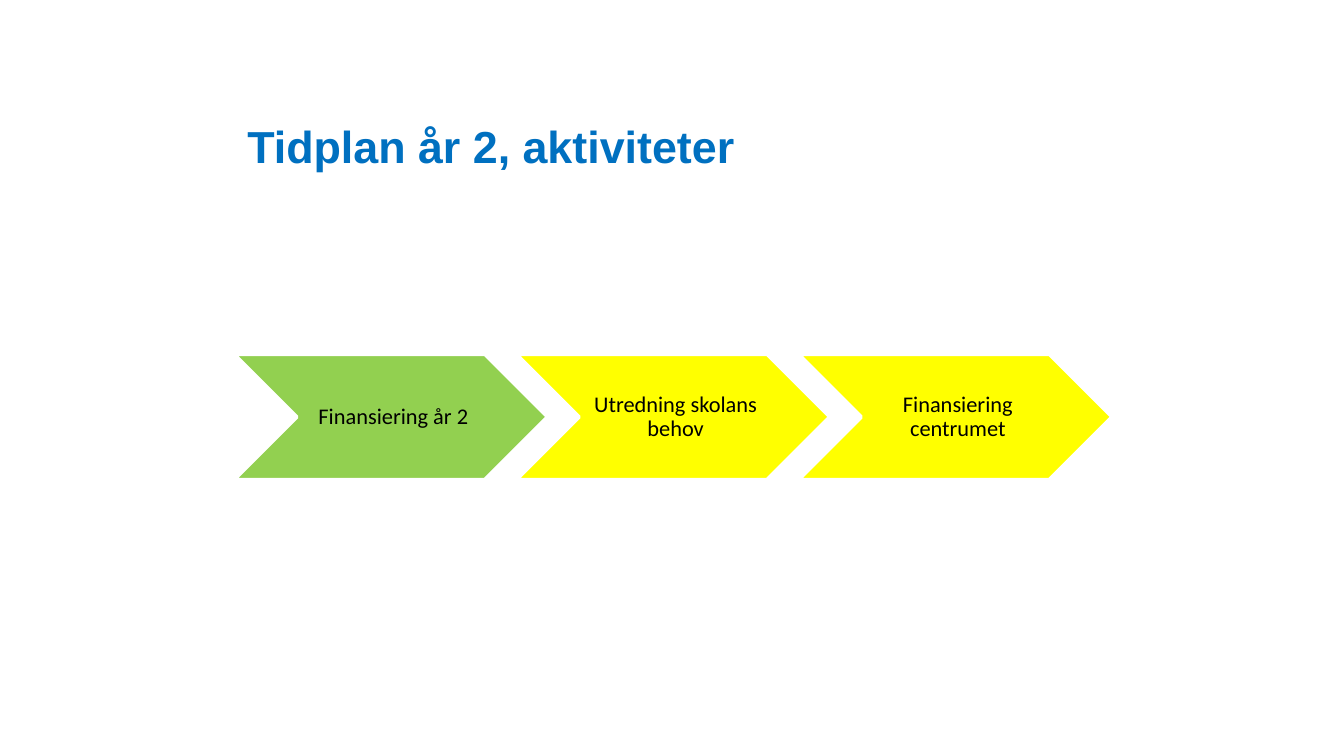
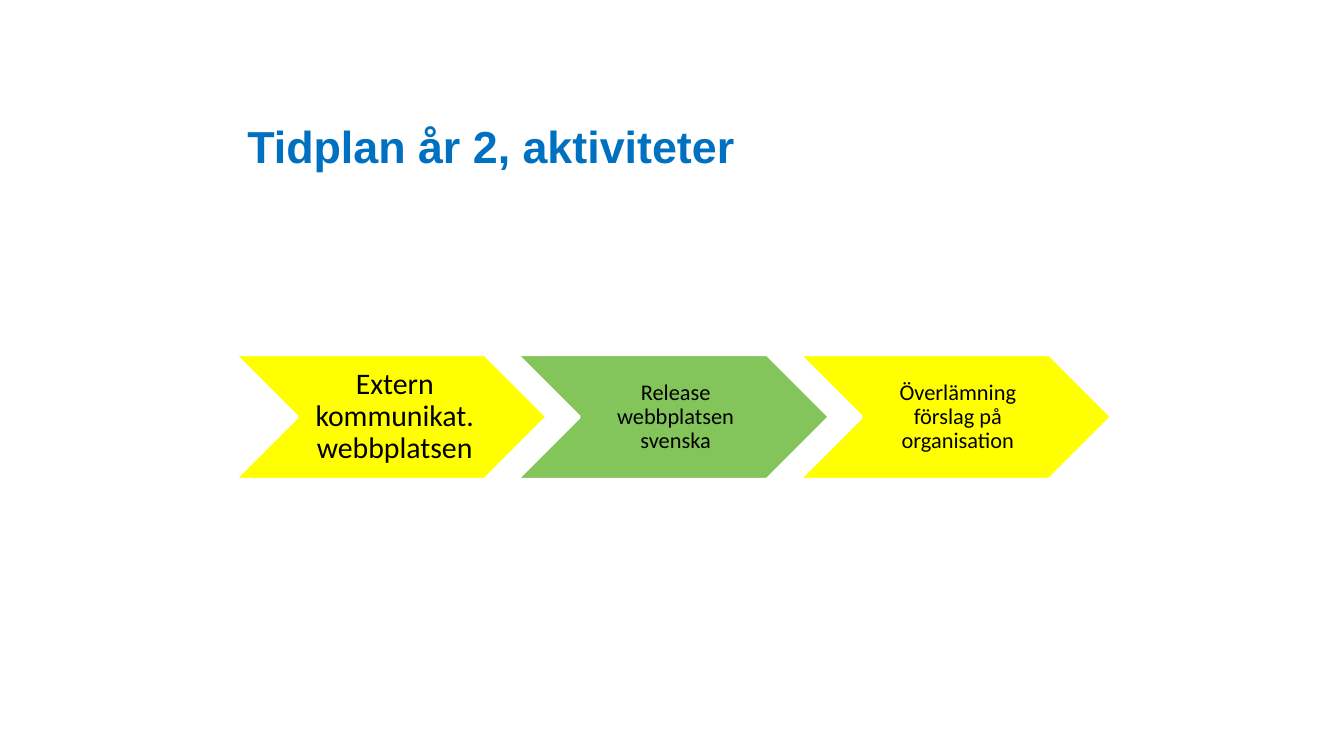
from pptx import Presentation
from pptx.dml.color import RGBColor
from pptx.enum.shapes import MSO_SHAPE
from pptx.enum.text import MSO_ANCHOR, MSO_AUTO_SIZE, PP_ALIGN
from pptx.util import Emu, Pt

EMU_PER_PX = 4572  # 200 px to the inch
TITLE_ONLY_LAYOUT = 5

BLUE = "0070C0"
BLACK = "000000"
WHITE = "FFFFFF"
YELLOW = "FFFF00"
LIME = "92D050"
GREEN = "83C55B"

CONTENT_LEFT = 348
CHEVRON_TOP = 527
CHEVRON_WIDTH = 467
CHEVRON_HEIGHT = 187
CHEVRON_STEP = 420
LABEL_INDENT = 94
LABEL_WIDTH = 281

TITLE = "Tidplan år 2, aktiviteter"
# Each activity: label, fill, text size, left inset
TIMELINES = [
    [
        ("Finansiering år 2", LIME, 12, 10),
        ("Utredning skolans behov", YELLOW, 12, 10),
        ("Finansiering centrumet", YELLOW, 12, 10),
    ],
    [
        ("Extern kommunikat. webbplatsen", YELLOW, 16, 14),
        ("Release webbplatsen svenska", GREEN, 12, 10),
        ("Överlämning förslag på organisation", YELLOW, 12, 10),
    ],
]


def px(length):
    return Emu(length * EMU_PER_PX)


def color(value):
    return RGBColor.from_string(value)


class TimelineDeck:
    def __init__(self):
        self.presentation = Presentation()
        self.presentation.slide_width = px(2000)
        self.presentation.slide_height = px(1125)
        self.slide = None

    def add_slide(self):
        layout = self.presentation.slide_layouts[TITLE_ONLY_LAYOUT]
        self.slide = self.presentation.slides.add_slide(layout)
        self.slide.background.fill.solid()
        self.slide.background.fill.fore_color.rgb = color(WHITE)

    def add_run(self, paragraph, text, font_name, size, text_color, bold=False):
        run = paragraph.add_run()
        run.text = text
        run.font.name = font_name
        run.font.size = Pt(size)
        run.font.bold = bold
        run.font.color.rgb = color(text_color)

    def add_title(self, text):
        title = self.slide.shapes.title
        title.left, title.top = px(CONTENT_LEFT), px(85)
        title.width, title.height = px(1308), px(182)
        frame = title.text_frame
        frame.auto_size = MSO_AUTO_SIZE.NONE
        frame.vertical_anchor = MSO_ANCHOR.BOTTOM
        paragraph = frame.paragraphs[0]
        paragraph.alignment = PP_ALIGN.LEFT
        self.add_run(paragraph, text, "Arial", 24, BLUE, bold=True)

    def add_chevron(self, group, left, fill):
        shape = group.shapes.add_shape(
            MSO_SHAPE.CHEVRON, px(left), px(CHEVRON_TOP),
            px(CHEVRON_WIDTH), px(CHEVRON_HEIGHT))
        shape.shadow.inherit = False
        shape.fill.solid()
        shape.fill.fore_color.rgb = color(fill)
        shape.line.color.rgb = color(WHITE)
        shape.line.width = Pt(2)

    def add_label(self, group, left, text, size, inset):
        box = group.shapes.add_textbox(
            px(left), px(CHEVRON_TOP), px(LABEL_WIDTH), px(CHEVRON_HEIGHT))
        frame = box.text_frame
        frame.word_wrap = True
        frame.vertical_anchor = MSO_ANCHOR.MIDDLE
        frame.margin_left = px(inset)
        frame.margin_top = frame.margin_right = frame.margin_bottom = px(4)
        paragraph = frame.paragraphs[0]
        paragraph.alignment = PP_ALIGN.CENTER
        paragraph.line_spacing = 0.9
        self.add_run(paragraph, text, "Calibri", size, BLACK)

    def add_timeline(self, activities):
        group = self.slide.shapes.add_group_shape()
        for index, (text, fill, size, inset) in enumerate(activities):
            left = CONTENT_LEFT + index * CHEVRON_STEP
            self.add_chevron(group, left, fill)
            self.add_label(group, left + LABEL_INDENT, text, size, inset)


def main():
    deck = TimelineDeck()
    for activities in TIMELINES:
        deck.add_slide()
        deck.add_title(TITLE)
        deck.add_timeline(activities)
    deck.presentation.save("out.pptx")


if __name__ == "__main__":
    main()
